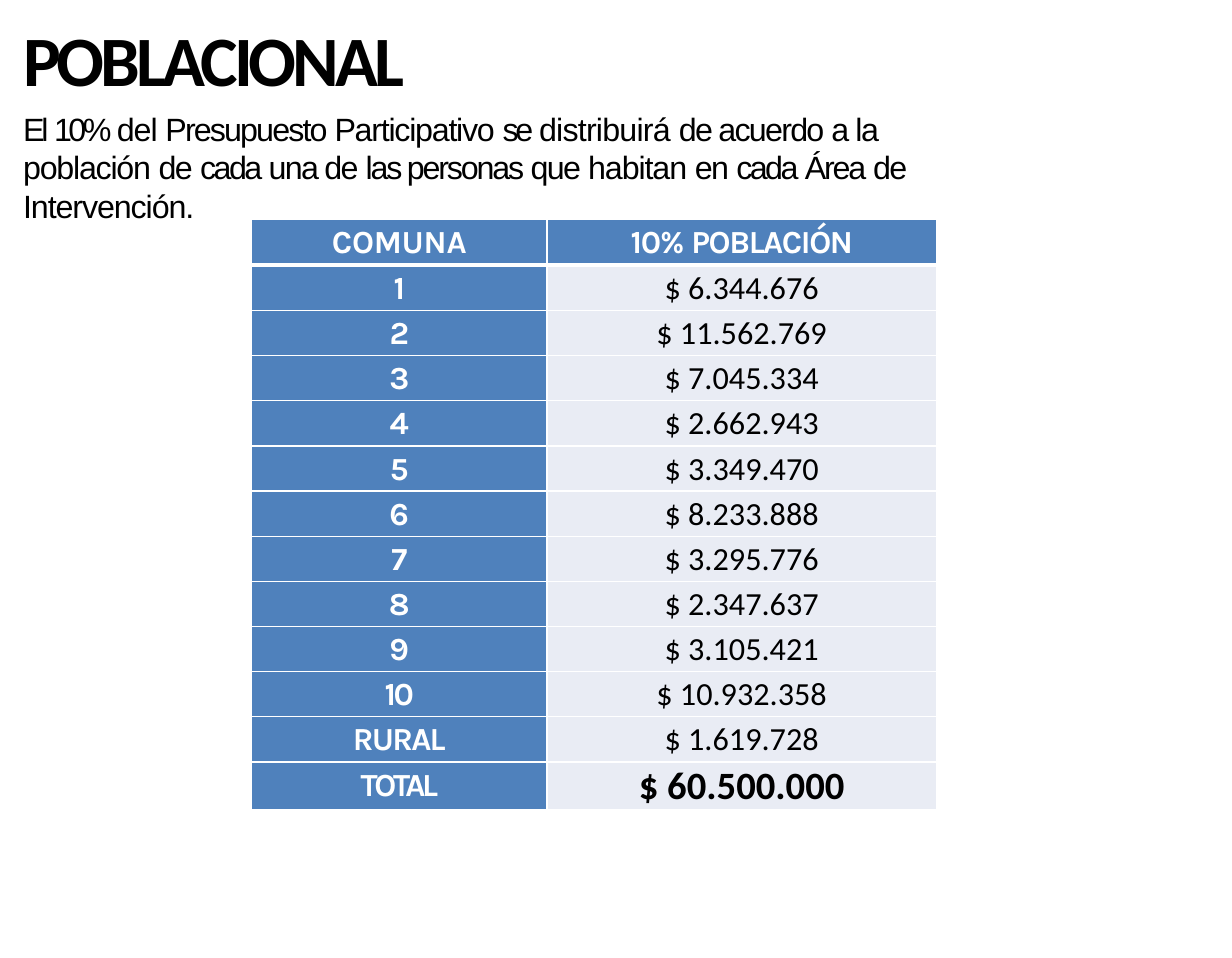
from dataclasses import dataclass

from lxml.etree import SubElement
from pptx import Presentation
from pptx.dml.color import RGBColor
from pptx.enum.text import MSO_ANCHOR as Anchor, PP_ALIGN as Align
from pptx.oxml.ns import qn
from pptx.util import Inches, Pt


@dataclass(frozen=True)
class Theme:
    black: str = "000000"
    white: str = "FFFFFF"
    blue: str = "4F81BC"
    pale: str = "E9ECF4"
    title_size: int = 44
    total_size: int = 24
    body_size: int = 20
    title_font: str = "Calibri"
    body_font: str = "Arial"
    label_font: str = "Karla"


THEME = Theme()


@dataclass(frozen=True)
class Style:
    font: str
    size: int
    color: str
    bold: bool = False


@dataclass(frozen=True)
class Piece:
    text: str
    spacing: float = 0


@dataclass(frozen=True)
class Row:
    label: str
    amount: str
    spacing: float = 0


TITLE = Style(THEME.title_font, THEME.title_size, THEME.black, True)
BODY = Style(THEME.body_font, THEME.body_size, THEME.black)
LABEL = Style(THEME.label_font, THEME.body_size, THEME.white, True)
AMOUNT = Style(THEME.title_font, THEME.body_size, THEME.black)
TOTAL = Style(THEME.title_font, THEME.total_size, THEME.black, True)

INTRO = [
    Piece("El ", -2.1), Piece("10% ", -2.2), Piece("del ", -0.7),
    Piece("Presupuesto ", -1.2), Piece("Participativo ", -0.8),
    Piece("se ", -2), Piece("distribuirá ", -0.5), Piece("de acuerdo ", -1.1),
    Piece("a ", -1.9), Piece("la población ", -0.8), Piece("de ", -1.1),
    Piece("cada ", -1.6), Piece("una de ", -1.1), Piece("las personas ", -1.4),
    Piece("que ", -1.1), Piece("habitan ", -0.7), Piece("en ", -1.1),
    Piece("cada ", -1.6), Piece("Área ", -1.4), Piece("de ", -1.1),
    Piece("Intervención.", -0.7),
]
HEADINGS = [
    [Piece("COMUNA", -0.2)],
    [Piece("10% ", -0.8), Piece("POBLACIÓN", -0.9)],
]
ROWS = [
    Row("1", "$ 6.344.676"),
    Row("2", "$ 11.562.769"),
    Row("3", "$ 7.045.334"),
    Row("4", "$ 2.662.943"),
    Row("5", "$ 3.349.470"),
    Row("6", "$ 8.233.888"),
    Row("7", "$ 3.295.776"),
    Row("8", "$ 2.347.637"),
    Row("9", "$ 3.105.421"),
    Row("10", "$ 10.932.358", -1.6),
    Row("RURAL", "$ 1.619.728", -1.1),
    Row("TOTAL", "$ 60.500.000", -2.1),
]
COLUMN_WIDTHS = (2.55, 3.36)
HEADER_HEIGHT, ROW_HEIGHT = 0.4, 0.39


def add_runs(para, pieces: list[Piece], style: Style) -> None:
    for piece in pieces:
        span = para.add_run()
        span.text = piece.text
        span.font.name = style.font
        span.font.size = Pt(style.size)
        span.font.bold = style.bold
        span.font.color.rgb = RGBColor.from_string(style.color)
        # Letter spacing is stored in hundredths of a point
        span._r.get_or_add_rPr().set("spc", str(round(piece.spacing * 100)))


def add_borders(cell, top: float, bottom: float) -> None:
    properties = cell._tc.get_or_add_tcPr()
    for side, width in (("L", 1), ("R", 1), ("T", top), ("B", bottom)):
        line = SubElement(properties, qn(f"a:ln{side}"), w=str(Pt(width)))
        fill = SubElement(line, qn("a:solidFill"))
        SubElement(fill, qn("a:srgbClr"), val=THEME.white)


def fill_cell(cell, pieces: list[Piece], style: Style, color: str,
              top: float = 1, bottom: float = 1) -> None:
    is_label = style is LABEL
    cell.margin_left = cell.margin_right = Inches(0 if is_label else 0.01)
    cell.margin_top = Inches(0.04 if is_label else 0.01)
    cell.margin_bottom = 0
    cell.vertical_anchor = Anchor.TOP if is_label else Anchor.MIDDLE
    add_borders(cell, top, bottom)
    cell.fill.solid()
    cell.fill.fore_color.rgb = RGBColor.from_string(color)
    para = cell.text_frame.paragraphs[0]
    para.alignment = Align.CENTER
    add_runs(para, pieces, style)


def add_heading(slide) -> None:
    box = slide.shapes.add_textbox(
        Inches(0.2), Inches(-0.05), Inches(8.11), Inches(1.97))
    frame = box.text_frame
    frame.word_wrap = True
    frame.vertical_anchor = Anchor.TOP
    frame.margin_left = frame.margin_right = frame.margin_bottom = 0
    frame.margin_top = Inches(0.19)
    add_runs(frame.paragraphs[0], [Piece("POBLACIONAL", -2.5)], TITLE)
    intro = frame.add_paragraph()
    intro.space_before = Pt(5)
    add_runs(intro, INTRO, BODY)


def add_budget_table(slide) -> None:
    table = slide.shapes.add_table(
        len(ROWS) + 1, len(COLUMN_WIDTHS), Inches(2.17), Inches(1.89),
        Inches(sum(COLUMN_WIDTHS)),
        Inches(HEADER_HEIGHT + ROW_HEIGHT * len(ROWS))).table
    table.horz_banding = False
    for column, width in zip(table.columns, COLUMN_WIDTHS):
        column.width = Inches(width)
    for index, line in enumerate(table.rows):
        line.height = Inches(ROW_HEIGHT if index else HEADER_HEIGHT)

    # Header row, with a thicker rule below it
    for index, pieces in enumerate(HEADINGS):
        fill_cell(table.cell(0, index), pieces, LABEL, THEME.blue, bottom=3)

    # One row per area, then the total
    for index, row in enumerate(ROWS, start=1):
        top = 3 if index == 1 else 1
        style = TOTAL if row.label == "TOTAL" else AMOUNT
        fill_cell(table.cell(index, 0), [Piece(row.label, row.spacing)],
                  LABEL, THEME.blue, top)
        fill_cell(table.cell(index, 1), [Piece(row.amount)],
                  style, THEME.pale, top)


def main() -> None:
    deck = Presentation()
    deck.slide_width, deck.slide_height = Inches(10.63), Inches(8.27)
    page = deck.slides.add_slide(deck.slide_layouts[6])
    add_heading(page)
    add_budget_table(page)
    deck.save("out.pptx")


if __name__ == "__main__":
    main()
